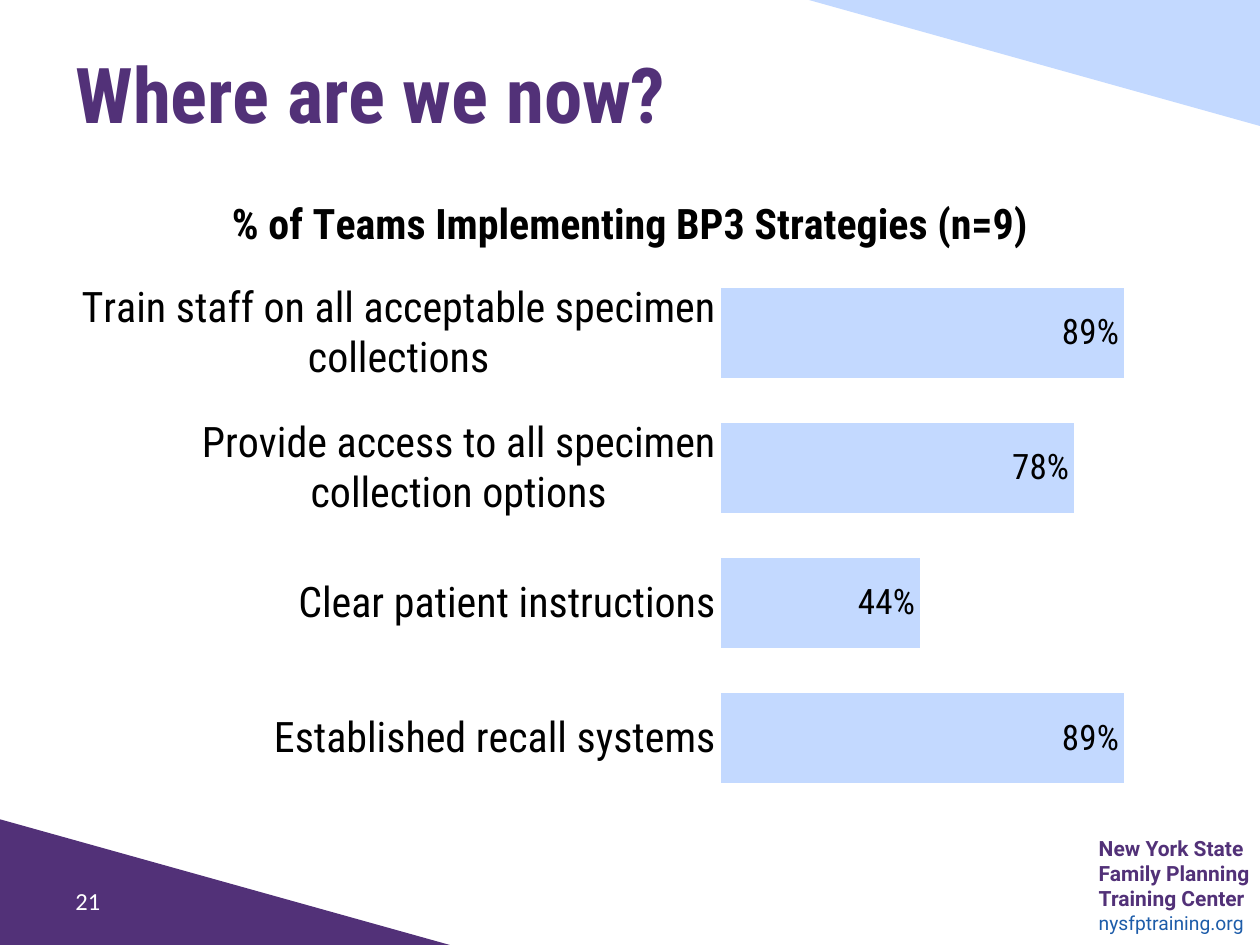
from lxml import etree
from pptx import Presentation
from pptx import util as u
from pptx.chart.data import CategoryChartData
from pptx.dml.color import RGBColor
from pptx.enum import chart as charts, shapes, text
from pptx.oxml import parse_xml
from pptx.oxml.ns import nsdecls

COLUMNS, ROWS = 100, 75
PURPLE, PALE_BLUE, LINK_BLUE = "523178", "C3D9FF", "1D5CA9"
BLACK, WHITE = "000000", "FFFFFF"
HEADING_FONT = "Roboto Condensed"
STRATEGIES = {
    "Train staff on all acceptable specimen collections": 0.89,
    "Provide access to all specimen collection options": 0.78,
    "Clear patient instructions": 0.44,
    "Established recall systems": 0.89,
}

presentation = Presentation()
presentation.slide_width = u.Inches(10)
presentation.slide_height = u.Inches(7.5)


def color(hex_string):
    return RGBColor.from_string(hex_string)


def place(left, top, width, height):
    column = presentation.slide_width / COLUMNS
    row = presentation.slide_height / ROWS
    return [u.Emu(round(length)) for length in
            (left * column, top * row, width * column, height * row)]


def style(font, name, size, fill, bold=False):
    font.name = name
    font.size = u.Pt(size)
    font.bold = bold
    font.color.rgb = color(fill)


def add_corner(slide, box, fill, rotation=0):
    shape = slide.shapes.add_shape(shapes.MSO_SHAPE.RIGHT_TRIANGLE, *place(*box))
    shape.shadow.inherit = False
    shape.fill.solid()
    shape.fill.fore_color.rgb = color(fill)
    shape.line.fill.background()
    shape.rotation = rotation


def add_line_of_text(slide, box, content, *font):
    text_frame = slide.shapes.add_textbox(*place(*box)).text_frame
    text_frame.word_wrap = True
    text_frame.vertical_anchor = text.MSO_ANCHOR.MIDDLE
    text_frame.text = content
    style(text_frame.paragraphs[0].runs[0].font, *font)


def add_signature(slide, box, name_lines, address):
    text_frame = slide.shapes.add_textbox(*place(*box)).text_frame
    text_frame.word_wrap = True
    text_frame.margin_left = text_frame.margin_right = 0
    text_frame.margin_top = text_frame.margin_bottom = 0
    text_frame.text = "\n".join([*name_lines, address])
    *names, link = text_frame.paragraphs
    for paragraph in names:
        style(paragraph.runs[0].font, "Roboto", 12, PURPLE, True)
    style(link.runs[0].font, "Roboto", 11, LINK_BLUE)


def set_plot_area(chart, **shares):
    plot_area = chart.plots[0]._element.getparent()
    for layout in plot_area.findall("{*}layout"):
        plot_area.remove(layout)
    layout = parse_xml(
        f'<c:layout {nsdecls("c")}><c:manualLayout><c:layoutTarget val="inner"/>'
        '<c:xMode val="edge"/><c:yMode val="edge"/></c:manualLayout></c:layout>')
    for name, share in shares.items():
        etree.SubElement(layout[0], layout[0][0].tag.replace("layoutTarget", name),
                         val=str(share))
    plot_area.insert(0, layout)


def add_strategy_chart(slide, box, title):
    data = CategoryChartData(number_format="0%")
    data.categories = list(STRATEGIES)
    data.add_series("Series 1", list(STRATEGIES.values()))
    chart = slide.shapes.add_chart(
        charts.XL_CHART_TYPE.BAR_CLUSTERED, *place(*box), data).chart
    style(chart.font, HEADING_FONT, 20, BLACK)
    chart.has_legend = False
    chart.has_title = True
    chart.chart_title.text_frame.text = title
    style(chart.chart_title.text_frame.paragraphs[0].runs[0].font,
          HEADING_FONT, 24, BLACK, True)

    categories = chart.category_axis
    categories.reverse_order = True
    categories.major_tick_mark = charts.XL_TICK_MARK.NONE
    categories.format.line.fill.background()
    style(categories.tick_labels.font, HEADING_FONT, 24, BLACK)

    values = chart.value_axis
    values.minimum_scale, values.maximum_scale, values.major_unit = 0, 1, 1
    values.has_major_gridlines = False
    values.tick_labels.number_format = "0%"
    values.tick_labels.number_format_is_linked = False
    values.visible = False

    plot = chart.plots[0]
    plot.gap_width = 50
    plot.vary_by_categories = False
    series = plot.series[0]
    series.format.fill.solid()
    series.format.fill.fore_color.rgb = color(PALE_BLUE)
    labels = series.data_labels
    labels.show_value = True
    labels.position = charts.XL_LABEL_POSITION.INSIDE_END
    labels.number_format = "0%"
    labels.number_format_is_linked = False
    style(labels.font, HEADING_FONT, 20, BLACK)
    set_plot_area(chart, x=0.58, y=0.15, w=0.4, h=0.83)


def main():
    slide = presentation.slides.add_slide(presentation.slide_layouts[6])
    add_corner(slide, (-0.1, 65, 35.8, 10), PURPLE)
    add_signature(slide, (87.2, 66.3, 15.1, 8.1),
                  ["New York State", "Family Planning", "Training Center"],
                  "nysfptraining.org")
    add_corner(slide, (64.2, 0, 35.8, 10), PALE_BLUE, 180)
    add_line_of_text(slide, (5, 3, 90, 8.7), "Where are we now?",
                     HEADING_FONT, 44, PURPLE, True)
    add_line_of_text(slide, (5, 69.5, 14, 4), "21", "Calibri", 14, WHITE)
    add_strategy_chart(slide, (5, 13.3, 90, 51.7),
                       "% of Teams Implementing BP3 Strategies (n=9)")
    presentation.save("out.pptx")


if __name__ == "__main__":
    main()
